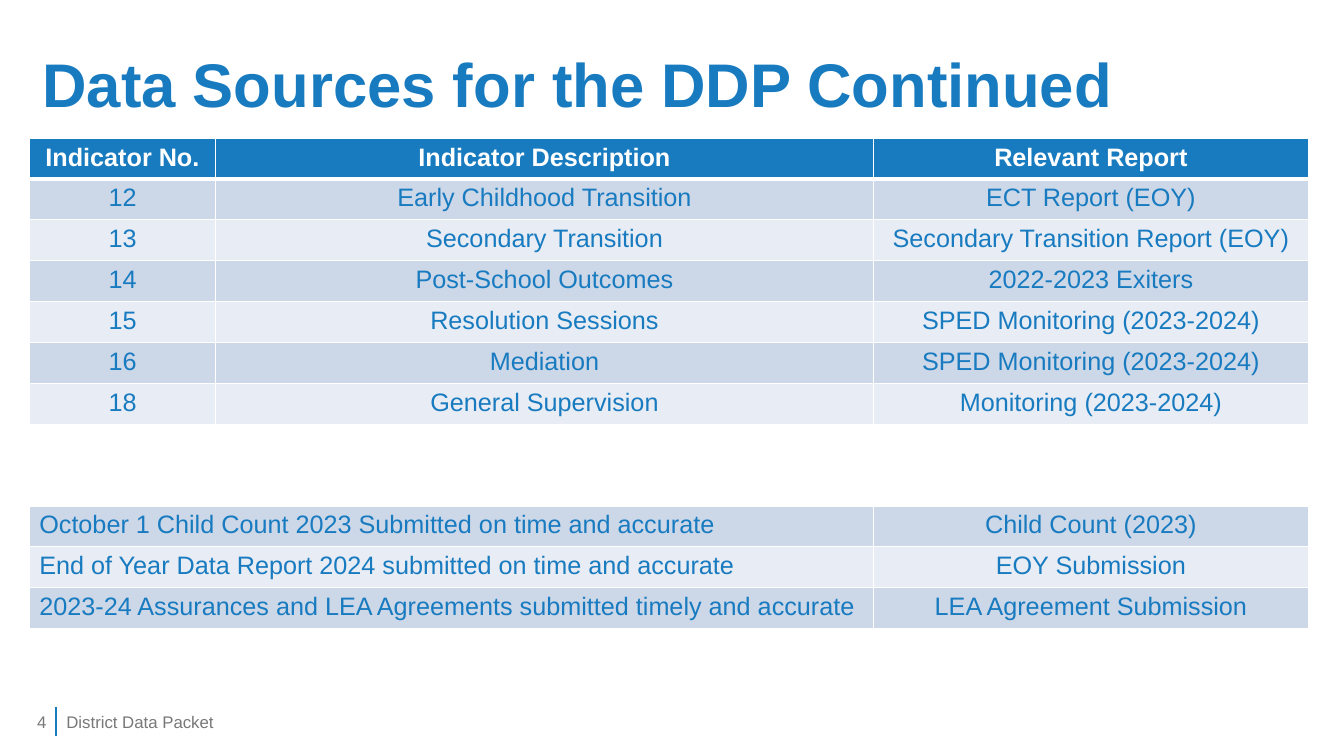
"""Build the slide listing the data sources for the district data packet."""
from lxml.etree import SubElement
from pptx import Presentation
from pptx.dml.color import RGBColor
from pptx.enum.shapes import MSO_CONNECTOR
from pptx.enum.text import MSO_ANCHOR, MSO_AUTO_SIZE, PP_ALIGN
from pptx.oxml.ns import qn
from pptx.util import Inches, Pt

BLUE, WHITE, GRAY = "187BC0", "FFFFFF", "787878"
BANDS = ["CCD7E8", "E8ECF4"]
COLUMN_WIDTHS = [1.85, 6.52, 4.32]
TABLE_HEIGHT = 4.87
HEADER = ["Indicator No.", "Indicator Description", "Relevant Report"]
INDICATORS = [
    ["12", "Early Childhood Transition", "ECT Report (EOY)"],
    ["13", "Secondary Transition", "Secondary Transition Report (EOY)"],
    ["14", "Post-School Outcomes", "2022-2023 Exiters"],
    ["15", "Resolution Sessions", "SPED Monitoring (2023-2024)"],
    ["16", "Mediation", "SPED Monitoring (2023-2024)"],
    ["18", "General Supervision", "Monitoring (2023-2024)"],
]
GAP_ROWS = [["", "", ""]] * 2
SUBMISSIONS = [
    ["October 1 Child Count 2023 Submitted on time and accurate", "", "Child Count (2023)"],
    ["End of Year Data Report 2024 submitted on time and accurate", "", "EOY Submission"],
    ["2023-24 Assurances and LEA Agreements submitted timely and accurate", "",
     "LEA Agreement Submission"],
]


def color(hex_code):
    """Turn a hex string into a colour."""
    return RGBColor.from_string(hex_code)


def write_text(frame, text, size=18, fill=BLUE, bold=False, align=PP_ALIGN.LEFT, spacing=1.0):
    """Put one formatted paragraph into a text frame."""
    paragraph = frame.paragraphs[0]
    paragraph.alignment = align
    paragraph.line_spacing = spacing
    run = paragraph.add_run()
    run.text = text
    run.font.name = "Arial"
    run.font.size = Pt(size)
    run.font.bold = bold
    run.font.color.rgb = color(fill)


def add_title(slide, text):
    """Place and format the title placeholder."""
    title = slide.shapes.title
    title.left, title.top = Inches(0.32), Inches(0.14)
    title.width, title.height = Inches(12.69), Inches(1.45)
    frame = title.text_frame
    frame.word_wrap = True
    frame.auto_size = MSO_AUTO_SIZE.NONE
    frame.vertical_anchor = MSO_ANCHOR.MIDDLE
    write_text(frame, text, size=44, bold=True, spacing=0.9)


def add_footer_text(slide, text, left, width, align):
    """Add a small gray text box at the foot of the slide."""
    box = slide.shapes.add_textbox(Inches(left), Inches(6.96), Inches(width), Inches(0.4))
    frame = box.text_frame
    frame.word_wrap = True
    frame.vertical_anchor = MSO_ANCHOR.MIDDLE
    write_text(frame, text, size=12, fill=GRAY, align=align)


def add_footer_line(slide):
    """Add the vertical line beside the page number."""
    x = Inches(0.56)
    line = slide.shapes.add_connector(MSO_CONNECTOR.STRAIGHT, x, Inches(7.01), x, Inches(7.3))
    line.line.color.rgb = color(BLUE)
    line.line.width = Pt(1.5)
    SubElement(line._element.spPr, qn("a:effectLst"))


def style_cell(cell, fill, top=1, bottom=1):
    """Give a cell white borders and a solid fill."""
    properties = cell._tc.get_or_add_tcPr()
    for side, width in {"L": 1, "R": 1, "T": top, "B": bottom}.items():
        border = SubElement(properties, qn(f"a:ln{side}"), w=str(Pt(width)))
        solid = SubElement(border, qn("a:solidFill"))
        SubElement(solid, qn("a:srgbClr"), val=WHITE)
    cell.fill.solid()
    cell.fill.fore_color.rgb = color(fill)


def add_sources_table(slide):
    """Add the table of indicators and submissions."""
    rows = [HEADER] + INDICATORS + GAP_ROWS + SUBMISSIONS
    fills = [BLUE] + [BANDS[i % 2] for i in range(len(INDICATORS))]
    fills += [WHITE] * len(GAP_ROWS) + [BANDS[i % 2] for i in range(len(SUBMISSIONS))]
    first_submission = len(rows) - len(SUBMISSIONS)
    table = slide.shapes.add_table(
        len(rows), len(HEADER), Inches(0.29), Inches(1.37),
        Inches(sum(COLUMN_WIDTHS)), Inches(TABLE_HEIGHT)).table
    for column, width in zip(table.columns, COLUMN_WIDTHS):
        column.width = Inches(width)
    for r, texts in enumerate(rows):
        table.rows[r].height = Inches(TABLE_HEIGHT / len(rows))
        is_header, is_submission = r == 0, r >= first_submission
        if is_submission:
            table.cell(r, 0).merge(table.cell(r, 1))
        for c, text in enumerate(texts):
            cell = table.cell(r, c)
            style_cell(cell, fills[r], top=3 if r == 1 else 1, bottom=3 if is_header else 1)
            if text:
                align = PP_ALIGN.LEFT if is_submission and c == 0 else PP_ALIGN.CENTER
                write_text(cell.text_frame, text, fill=WHITE if is_header else BLUE,
                           bold=is_header, align=align)


def main():
    """Build and save the presentation."""
    presentation = Presentation()
    presentation.slide_width, presentation.slide_height = Inches(13.33), Inches(7.5)
    slide = presentation.slides.add_slide(presentation.slide_layouts[5])
    add_footer_line(slide)
    add_title(slide, "Data Sources for the DDP Continued")
    add_footer_text(slide, "District Data Packet", 0.56, 6.52, PP_ALIGN.LEFT)
    add_footer_text(slide, "4", 0, 0.56, PP_ALIGN.RIGHT)
    add_sources_table(slide)
    presentation.save("out.pptx")


if __name__ == "__main__":
    main()
